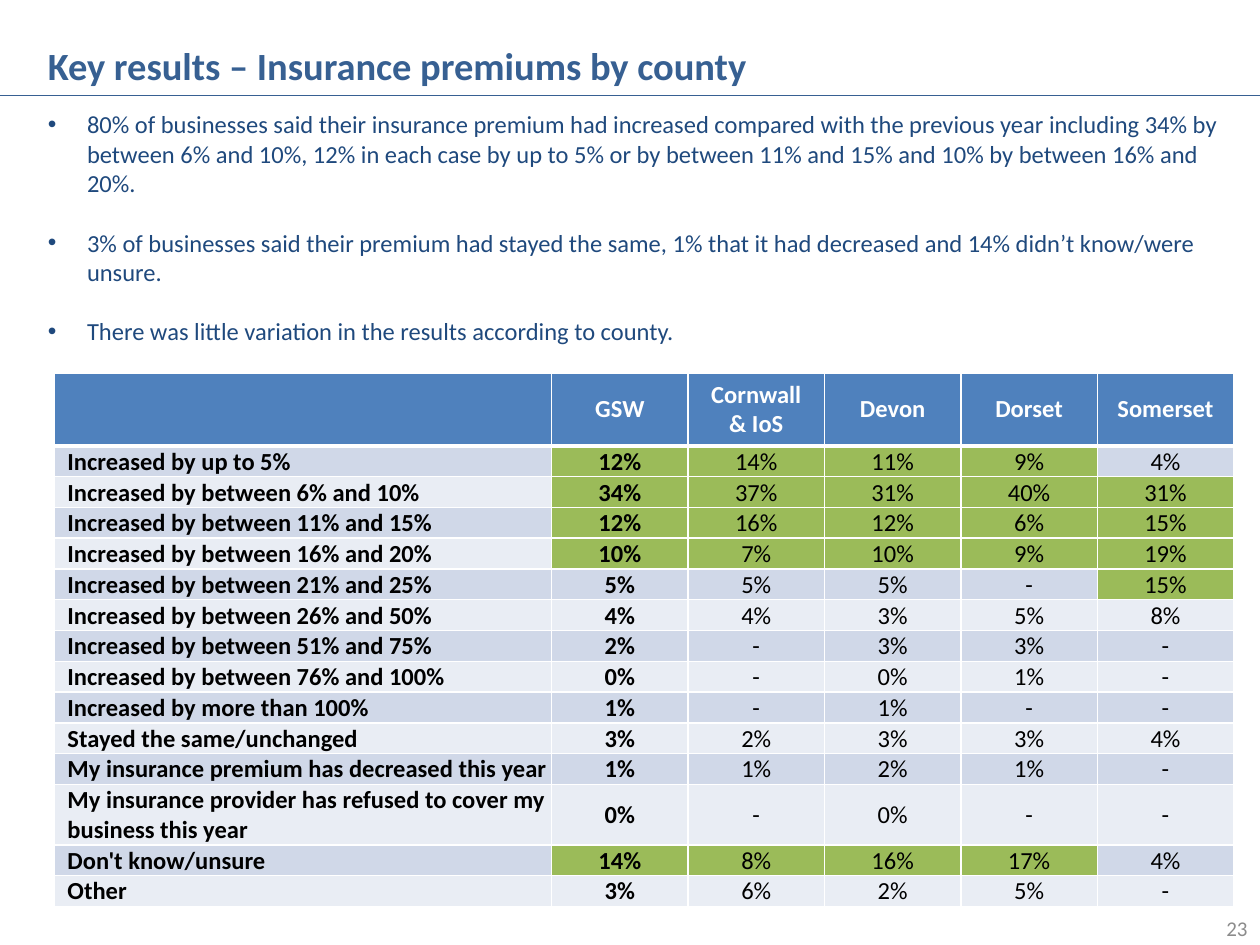
from dataclasses import dataclass

from lxml.etree import SubElement
from pptx import Presentation
from pptx.dml.color import RGBColor
from pptx.enum.shapes import MSO_CONNECTOR as Connector
from pptx.enum.text import MSO_ANCHOR as Anchor, MSO_AUTO_SIZE as AutoSize, PP_ALIGN as Align
from pptx.oxml.ns import qn
from pptx.util import Cm, Pt

FONT = "Calibri"
TITLE_BLUE, BODY_BLUE, HEADER_BLUE = "376092", "1F497D", "4F81BD"
BANDS = ("D0D8E8", "E9EDF4")
HIGHLIGHT, WHITE, BLACK, GREY = "9BBB59", "FFFFFF", "000000", "8C8C8C"


@dataclass(frozen=True)
class Premium:
    answer: str
    shares: str
    highlighted: tuple[int, ...] = ()
    height: float = 0.62


@dataclass(frozen=True)
class CellStyle:
    fill: str
    color: str
    bold: bool
    align: Align
    top: float = 1
    bottom: float = 1


COUNTIES = ("GSW", "Cornwall & IoS", "Devon", "Dorset", "Somerset")
PREMIUMS = (
    Premium("Increased by up to 5%", "12% 14% 11% 9% 4%", (1, 2, 3, 4)),
    Premium("Increased by between 6% and 10%", "34% 37% 31% 40% 31%", (1, 2, 3, 4, 5)),
    Premium("Increased by between 11% and 15%", "12% 16% 12% 6% 15%", (1, 2, 3, 4, 5)),
    Premium("Increased by between 16% and 20%", "10% 7% 10% 9% 19%", (1, 2, 3, 4, 5)),
    Premium("Increased by between 21% and 25%", "5% 5% 5% - 15%", (5,)),
    Premium("Increased by between 26% and 50%", "4% 4% 3% 5% 8%"),
    Premium("Increased by between 51% and 75%", "2% - 3% 3% -"),
    Premium("Increased by between 76% and 100%", "0% - 0% 1% -"),
    Premium("Increased by more than 100%", "1% - 1% - -"),
    Premium("Stayed the same/unchanged", "3% 2% 3% 3% 4%"),
    Premium("My insurance premium has decreased this year", "1% 1% 2% 1% -"),
    Premium("My insurance provider has refused to cover my business this year",
            "0% - 0% - -", height=1.22),
    Premium("Don't know/unsure", "14% 8% 16% 17% 4%", (1, 2, 3, 4)),
    Premium("Other", "3% 6% 2% 5% -"),
)
FINDINGS = (
    "80% of businesses said their insurance premium had increased compared with the previous "
    "year including 34% by between 6% and 10%, 12% in each case by up to 5% or by between "
    "11% and 15% and 10% by between 16% and 20%.",
    "3% of businesses said their premium had stayed the same, 1% that it had decreased and "
    "14% didn’t know/were unsure.",
    "There was little variation in the results according to county.",
)


def rgb(value: str) -> RGBColor:
    return RGBColor.from_string(value)


def set_font(paragraph, size: float, color: str, bold: bool = False) -> None:
    font = paragraph.font
    font.name, font.size, font.bold = FONT, Pt(size), bold
    font.color.rgb = rgb(color)


def place(shape, left: float, top: float, width: float, height: float) -> None:
    shape.left, shape.top = Cm(left), Cm(top)
    shape.width, shape.height = Cm(width), Cm(height)


def add_title(slide) -> None:
    title = slide.shapes.title
    place(title, 0.71, 0.53, 14.76, 1.32)
    frame = title.text_frame
    frame.text = "Key results – Insurance premiums by county"
    frame.word_wrap, frame.auto_size = False, AutoSize.NONE
    frame.vertical_anchor = Anchor.TOP
    heading = frame.paragraphs[0]
    heading.alignment, heading.line_spacing = Align.LEFT, 1.2
    set_font(heading, 22, TITLE_BLUE, True)


def add_findings(slide) -> None:
    body = slide.placeholders[1]
    place(body, 0.71, 2.08, 24.21, 5.64)
    frame = body.text_frame
    frame.text = "\n".join(FINDINGS)
    frame.auto_size = AutoSize.NONE
    for finding in frame.paragraphs:
        finding.space_before, finding.space_after = Pt(0), Pt(17)
        properties = finding._p.get_or_add_pPr()
        properties.set("marL", str(Cm(0.79)))
        properties.set("indent", str(Cm(-0.79)))
        SubElement(properties, qn("a:buChar"), char="•")
        set_font(finding, 14, BODY_BLUE)


def add_rule(slide) -> None:
    rule = slide.shapes.add_connector(Connector.STRAIGHT, 0, Cm(1.93), Cm(25.4), Cm(1.93))
    rule.line.color.rgb, rule.line.width = rgb(TITLE_BLUE), Pt(0.75)
    SubElement(rule._element.spPr, qn("a:effectLst"))


def add_page_number(slide) -> None:
    frame = slide.shapes.add_textbox(Cm(19.48), Cm(18.21), Cm(5.92), Cm(1.02)).text_frame
    frame.text = "23"
    frame.word_wrap, frame.vertical_anchor = True, Anchor.MIDDLE
    number = frame.paragraphs[0]
    number.alignment = Align.RIGHT
    set_font(number, 12, GREY)


def add_border(cell, edge: str, width: float) -> None:
    line = SubElement(cell._tc.get_or_add_tcPr(), qn(f"a:{edge}"), w=str(Pt(width)))
    SubElement(SubElement(line, qn("a:solidFill")), qn("a:srgbClr"), val=WHITE)


def fill_cell(cell, text: str, style: CellStyle) -> None:
    cell.text = text
    cell.vertical_anchor = Anchor.MIDDLE
    paragraph = cell.text_frame.paragraphs[0]
    paragraph.alignment = style.align
    set_font(paragraph, 14, style.color, style.bold)
    for edge, width in (("lnL", 1), ("lnR", 1), ("lnT", style.top), ("lnB", style.bottom)):
        add_border(cell, edge, width)
    cell.fill.solid()
    cell.fill.fore_color.rgb = rgb(style.fill)


def add_premium_row(table, row: int, premium: Premium) -> None:
    table.rows[row].height = Cm(premium.height)
    band = BANDS[(row - 1) % 2]
    for column, text in enumerate((premium.answer, *premium.shares.split())):
        cell = table.cell(row, column)
        cell.margin_left = cell.margin_right = cell.margin_top = Cm(0.02)
        cell.margin_bottom = 0
        fill_cell(cell, text, CellStyle(
            fill=HIGHLIGHT if column in premium.highlighted else band,
            color=BLACK,
            bold=column < 2,
            align=Align.CENTER if column else Align.LEFT,
            top=3 if row == 1 else 1,
        ))
    answer = table.cell(row, 0).text_frame.paragraphs[0]
    answer._p.get_or_add_pPr().set("marL", str(Cm(0.25)))


def add_premium_table(slide) -> None:
    header_height, answer_width, county_width = 1.47, 10.03, 2.75
    table = slide.shapes.add_table(
        len(PREMIUMS) + 1, len(COUNTIES) + 1, Cm(1.09), Cm(7.52),
        Cm(answer_width + county_width * len(COUNTIES)),
        Cm(header_height + sum(premium.height for premium in PREMIUMS)),
    ).table
    table.horz_banding = False
    table.rows[0].height = Cm(header_height)
    header = CellStyle(HEADER_BLUE, WHITE, True, Align.CENTER, bottom=3)
    for column, county in enumerate(("", *COUNTIES)):
        table.columns[column].width = Cm(county_width if column else answer_width)
        fill_cell(table.cell(0, column), county, header)
    for row, premium in enumerate(PREMIUMS, 1):
        add_premium_row(table, row, premium)


def main() -> None:
    deck = Presentation()
    deck.slide_width, deck.slide_height = Cm(25.4), Cm(19.05)
    slide = deck.slides.add_slide(deck.slide_layouts[1])
    add_title(slide)
    add_findings(slide)
    add_rule(slide)
    add_page_number(slide)
    add_premium_table(slide)
    deck.save("out.pptx")


if __name__ == "__main__":
    main()
